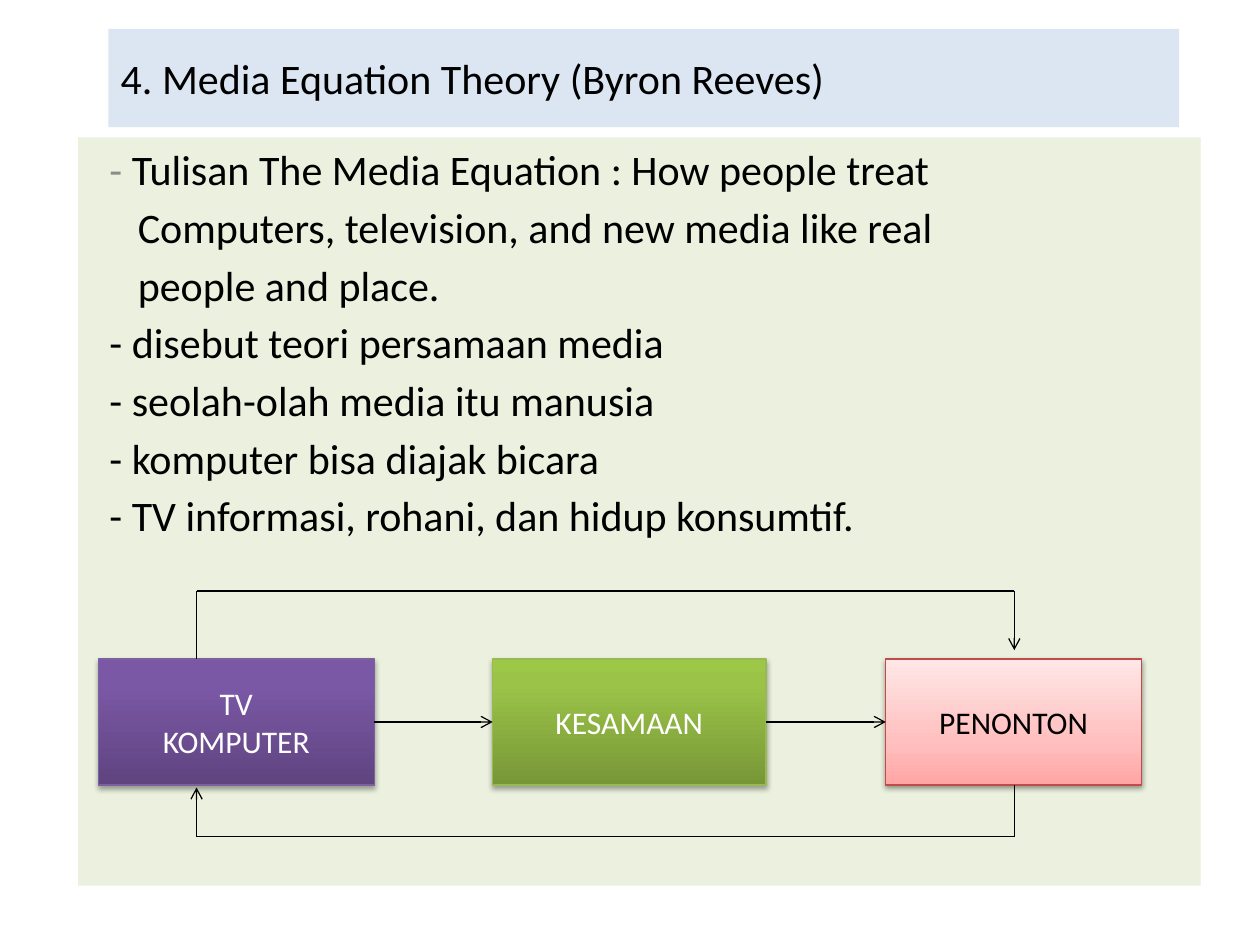
import pptx
import pptx.dml.color
import pptx.enum.shapes
import pptx.enum.text
import pptx.oxml
import pptx.oxml.ns
import pptx.util
from lxml import etree

WIDTH, HEIGHT = 10, 7.5
FONT = "Calibri"
SPACE = 0.075  # width of one space at 24 pt, in inches

# Rows and columns of the diagram, in inches
BOX_TOP, BOX_HEIGHT = 5.23, 1
BOX_BOTTOM = BOX_TOP + BOX_HEIGHT
BOX_MIDDLE = BOX_TOP + BOX_HEIGHT / 2
LOOP_TOP, LOOP_BOTTOM = 4.69, 6.64
LOOP_LEFT, LOOP_RIGHT = 1.56, 8.05

# Indent in spaces, text
BODY = [
    (2, "- Tulisan The Media Equation : How people treat"),
    (5, "Computers, television, and new media like real"),
    (5, "people and place."),
    (2, "- disebut teori persamaan media"),
    (2, "- seolah-olah media itu manusia"),
    (2, "- komputer bisa diajak bicara"),
    (2, "- TV informasi, rohani, dan hidup konsumtif."),
]

# Left, width, lines, text colour, line colour, gradient stops from the bottom up,
# shadow opacity and distance
BOXES = [
    (0.78, 2.19, "TV\nKOMPUTER", "FFFFFF", "7D60A0",
     [(0, "5F4480"), (80, "7B58A6"), (100, "7C57A8")], 35, 1.8),
    (3.91, 2.17, "KESAMAAN", "FFFFFF", "98B955",
     [(0, "779737"), (80, "9BC348"), (100, "9DC746")], 35, 1.8),
    (7.03, 2.03, "PENONTON", "000000", "BF4C48",
     [(0, "FFA6A5"), (35, "FFC0BF"), (100, "FFE7E7")], 38, 1.6),
]


def color(value):
    return pptx.dml.color.RGBColor.from_string(value)


def inches(*lengths):
    return [pptx.util.Inches(length) for length in lengths]


def add_child(parent, tag, **attributes):
    child = etree.SubElement(parent, pptx.oxml.ns.qn(tag))
    for name, value in attributes.items():
        child.set(name, str(value))
    return child


def add_rectangle(page, left, top, width, height):
    box = page.shapes.add_shape(
        pptx.enum.shapes.MSO_SHAPE.RECTANGLE, *inches(left, top, width, height))
    box.shadow.inherit = False
    return box


def style_text(box, size, text_color, alignment):
    for para in box.text_frame.paragraphs:
        para.alignment = alignment
        for span in para.runs:
            span.font.name = FONT
            span.font.size = pptx.util.Pt(size)
            span.font.color.rgb = color(text_color)


def add_panel(page, place, fill, text, anchor):
    box = add_rectangle(page, *place)
    box.fill.solid()
    box.fill.fore_color.rgb = color(fill)
    box.line.fill.background()
    box.text_frame.text = text
    box.text_frame.word_wrap = True
    box.text_frame.vertical_anchor = anchor
    style_text(box, 24, "000000", pptx.enum.text.PP_ALIGN.LEFT)
    return box


def add_body(page):
    box = add_panel(page, (0.62, 1.09, 8.91, 5.94), "EBF1DE",
                    "\n".join(text for _, text in BODY),
                    pptx.enum.text.MSO_ANCHOR.TOP)
    paragraphs = box.text_frame.paragraphs
    for number, (para, (indent, _)) in enumerate(zip(paragraphs, BODY)):
        properties = para._p.get_or_add_pPr()
        properties.set("marL", str(pptx.util.Inches(indent * SPACE)))
        properties.set("indent", "0")
        if number:
            para.space_before = pptx.util.Pt(4.2)

    # The first dash is grey, the words after it black
    first = paragraphs[0]
    dash, words = first.runs[0], first.add_run()
    dash.text, words.text = "- ", BODY[0][1][2:]
    style_text(box, 24, "000000", pptx.enum.text.PP_ALIGN.LEFT)
    dash.font.color.rgb = color("8C8C8C")


def add_gradient(box, stops):
    box.fill.gradient()
    box.fill.gradient_angle = 90
    stop_list = box._element.spPr.find(".//" + pptx.oxml.ns.qn("a:gsLst"))
    for stop in list(stop_list):
        stop_list.remove(stop)
    for position, value in stops:
        stop = add_child(stop_list, "a:gs", pos=position * 1000)
        add_child(stop, "a:srgbClr", val=value)


def add_shadow(box, opacity, distance):
    effects = box._element.spPr.find(pptx.oxml.ns.qn("a:effectLst"))
    shadow = add_child(effects, "a:outerShdw", blurRad=pptx.util.Pt(3.1),
                       dist=pptx.util.Pt(distance), dir=90 * 60000, rotWithShape=0)
    shade = add_child(shadow, "a:srgbClr", val="000000")
    add_child(shade, "a:alpha", val=opacity * 1000)


def add_diagram_box(page, left, width, text, text_color, line_color, stops,
                    opacity, distance):
    box = add_rectangle(page, left, BOX_TOP, width, BOX_HEIGHT)
    add_gradient(box, stops)
    box.line.color.rgb = color(line_color)
    box.line.width = pptx.util.Pt(0.75)
    add_shadow(box, opacity, distance)
    box.text_frame.text = text
    box.text_frame.word_wrap = True
    box.text_frame.vertical_anchor = pptx.enum.text.MSO_ANCHOR.MIDDLE
    style_text(box, 18, text_color, pptx.enum.text.PP_ALIGN.CENTER)


def add_route(page, *points):
    """Joins the points with straight lines and ends in an arrowhead."""
    for start, end in zip(points, points[1:]):
        line = page.shapes.add_connector(
            pptx.enum.shapes.MSO_CONNECTOR.STRAIGHT, *inches(*start, *end))
        line.line.color.rgb = color("000000")
        line.line.width = pptx.util.Pt(0.75)
        if end == points[-1]:
            add_child(line.line._get_or_add_ln(), "a:tailEnd", type="arrow")
        add_child(line._element.spPr, "a:effectLst")


def main():
    deck = pptx.Presentation()
    deck.slide_width, deck.slide_height = inches(WIDTH, HEIGHT)
    page = deck.slides.add_slide(deck.slide_layouts[6])

    add_panel(page, (0.86, 0.23, 8.5, 0.78), "DCE6F2",
              "4. Media Equation Theory (Byron Reeves)",
              pptx.enum.text.MSO_ANCHOR.MIDDLE)
    add_body(page)
    for box in BOXES:
        add_diagram_box(page, *box)

    add_route(page, (LOOP_LEFT, BOX_TOP), (LOOP_LEFT, LOOP_TOP),
              (LOOP_RIGHT, LOOP_TOP), (LOOP_RIGHT, 5.16))
    add_route(page, (LOOP_RIGHT, BOX_BOTTOM), (LOOP_RIGHT, LOOP_BOTTOM),
              (LOOP_LEFT, LOOP_BOTTOM), (LOOP_LEFT, 6.25))
    for source, target in zip(BOXES, BOXES[1:]):
        add_route(page, (source[0] + source[1], BOX_MIDDLE), (target[0], BOX_MIDDLE))

    deck.save("out.pptx")


if __name__ == "__main__":
    main()
